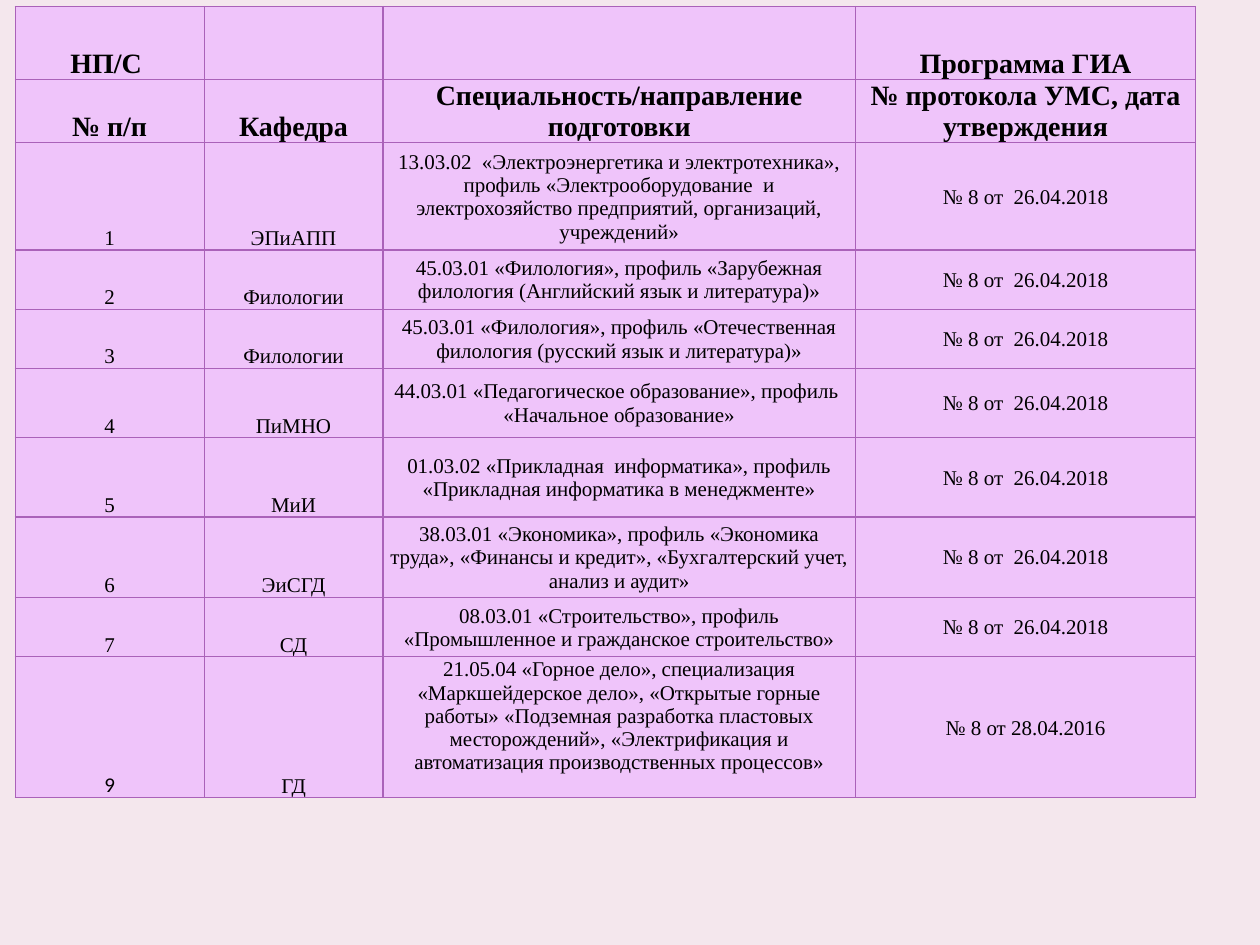
from dataclasses import dataclass

from lxml.etree import SubElement
from pptx import Presentation
from pptx.dml.color import RGBColor
from pptx.enum.text import MSO_ANCHOR, PP_ALIGN
from pptx.oxml.ns import qn
from pptx.util import Inches, Pt


@dataclass(frozen=True)
class Theme:
    background: str = "F4E7ED"
    cell: str = "EFC4FA"
    border: str = "AA62B9"
    text: str = "000000"
    font: str = "Times New Roman"
    last_number_font: str = "Calibri"
    header_size: int = 16
    body_size: int = 12
    border_width: float = 0.75


THEME = Theme()
COLUMN_WIDTHS = [1.5, 1.42, 3.75, 2.7]
ROW_HEIGHTS = [0.58, 0.5, 0.85, 0.47, 0.47, 0.55, 0.63, 0.64, 0.47, 1.12]
HEADERS = [
    ("НП/С ", "", "", "Программа ГИА"),
    ("№ п/п", "Кафедра", "Специальность/направление подготовки",
     "№ протокола УМС, дата утверждения"),
]
PROTOCOL = "№ 8 от  26.04.2018"
PROGRAMMES = [
    ("1", "ЭПиАПП", "13.03.02  «Электроэнергетика и электротехника», профиль "
     "«Электрооборудование  и электрохозяйство предприятий, организаций, учреждений»", PROTOCOL),
    ("2", "Филологии", "45.03.01 «Филология», профиль «Зарубежная филология "
     "(Английский язык и литература)»", PROTOCOL),
    ("3", "Филологии", "45.03.01 «Филология», профиль «Отечественная филология "
     "(русский язык и литература)»", PROTOCOL),
    ("4", "ПиМНО", "44.03.01 «Педагогическое образование», профиль  "
     "«Начальное образование»", PROTOCOL),
    ("5", "МиИ", "01.03.02 «Прикладная  информатика», профиль "
     "«Прикладная информатика в менеджменте»", PROTOCOL),
    ("6", "ЭиСГД", "38.03.01 «Экономика», профиль «Экономика труда», "
     "«Финансы и кредит», «Бухгалтерский учет, анализ и аудит»", PROTOCOL),
    ("7", "СД", "08.03.01 «Строительство», профиль "
     "«Промышленное и гражданское строительство»", PROTOCOL),
    ("9", "ГД", "21.05.04 «Горное дело», специализация «Маркшейдерское дело», "
     "«Открытые горные работы» «Подземная разработка пластовых месторождений», "
     "«Электрификация и автоматизация производственных процессов»", "№ 8 от 28.04.2016"),
]


def set_borders(cell):
    properties = cell._tc.get_or_add_tcPr()
    for side in ("a:lnL", "a:lnR", "a:lnT", "a:lnB"):
        line = SubElement(properties, qn(side), w=str(Pt(THEME.border_width)))
        fill = SubElement(line, qn("a:solidFill"))
        SubElement(fill, qn("a:srgbClr"), val=THEME.border)


def format_cell(cell, text, anchor, size, bold, font=THEME.font):
    set_borders(cell)
    cell.fill.solid()
    cell.fill.fore_color.rgb = RGBColor.from_string(THEME.cell)
    cell.margin_left = cell.margin_right = cell.margin_top = Inches(0.01)
    cell.margin_bottom = 0
    cell.vertical_anchor = anchor
    paragraph = cell.text_frame.paragraphs[0]
    paragraph.text = text
    paragraph.alignment = PP_ALIGN.CENTER
    for run in paragraph.runs:
        run.font.name = font
        run.font.size = Pt(size)
        run.font.bold = bold
        run.font.color.rgb = RGBColor.from_string(THEME.text)


def add_programme_table(slide):
    table = slide.shapes.add_table(
        len(ROW_HEIGHTS), len(COLUMN_WIDTHS), Inches(0.12), Inches(0.05),
        Inches(sum(COLUMN_WIDTHS)), Inches(sum(ROW_HEIGHTS))).table
    for column, width in zip(table.columns, COLUMN_WIDTHS):
        column.width = Inches(width)
    for row, height in zip(table.rows, ROW_HEIGHTS):
        row.height = Inches(height)

    # Two header rows
    for row, texts in enumerate(HEADERS):
        for column, text in enumerate(texts):
            format_cell(table.cell(row, column), text, MSO_ANCHOR.BOTTOM,
                        THEME.header_size, True)
    table.cell(1, 3).vertical_anchor = MSO_ANCHOR.MIDDLE

    # One row for each programme
    for row, texts in enumerate(PROGRAMMES, start=len(HEADERS)):
        for column, text in enumerate(texts):
            anchor = MSO_ANCHOR.BOTTOM if column < 2 else MSO_ANCHOR.MIDDLE
            font = THEME.last_number_font if text == "9" else THEME.font
            format_cell(table.cell(row, column), text, anchor,
                        THEME.body_size, False, font)
    # The long last programme starts at the top of its cell
    table.cell(len(ROW_HEIGHTS) - 1, 2).vertical_anchor = MSO_ANCHOR.TOP


def main():
    presentation = Presentation()
    presentation.slide_width = Inches(10)
    presentation.slide_height = Inches(7.5)
    slide = presentation.slides.add_slide(presentation.slide_layouts[6])
    slide.background.fill.solid()
    slide.background.fill.fore_color.rgb = RGBColor.from_string(THEME.background)
    add_programme_table(slide)
    presentation.save("out.pptx")


if __name__ == "__main__":
    main()
